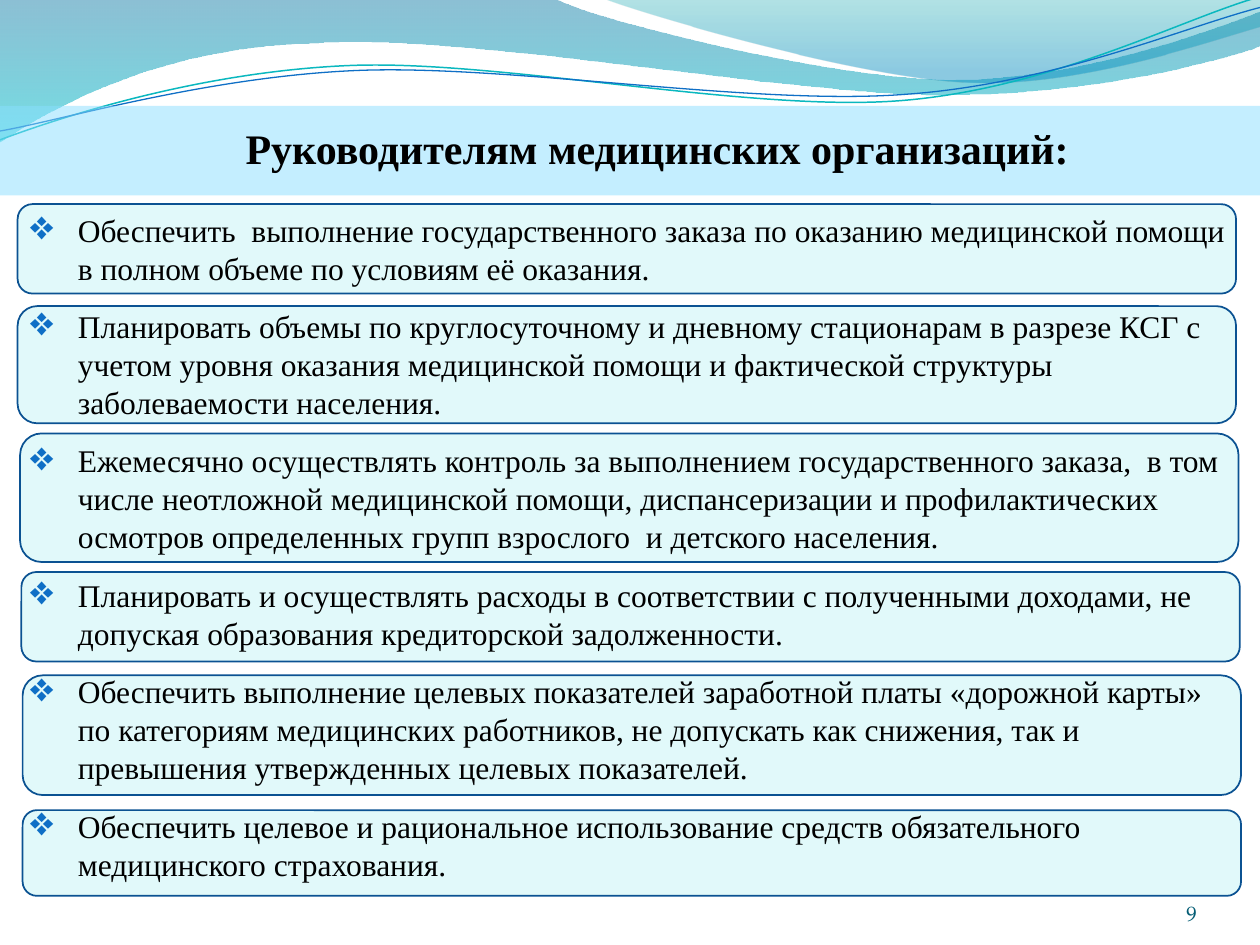
import math

import pptx
import pptx.dml.color
import pptx.enum.shapes
import pptx.enum.text
import pptx.oxml
import pptx.oxml.ns
import pptx.util

RGBColor = pptx.dml.color.RGBColor
Shapes = pptx.enum.shapes.MSO_SHAPE
Align = pptx.enum.text.PP_ALIGN
Anchor = pptx.enum.text.MSO_ANCHOR
AutoSize = pptx.enum.text.MSO_AUTO_SIZE

BLACK = RGBColor(0x00, 0x00, 0x00)
CARD = RGBColor(0x0B, 0xD0, 0xD9)
BORDER = RGBColor(0x0B, 0x52, 0x92)
BAND = RGBColor(0x8A, 0xDF, 0xFF)
BULLET = RGBColor(0x0F, 0x6F, 0xC6)
TEAL = RGBColor(0x0A, 0xB8, 0xBF)
NUMBER = RGBColor(0x04, 0x5D, 0x75)
DEEP_BLUE = RGBColor(0x00, 0x74, 0xA1)
CYAN = RGBColor(0x00, 0xC6, 0xCF)
SEA_GREEN = RGBColor(0x00, 0xA1, 0xA9)
SKY_BLUE = RGBColor(0x00, 0x8B, 0xBF)

SERIF = "Times New Roman"
PAGE_FONT = "TeX Gyre Pagella"
PX_PER_INCH = 100
CURVE_TILT = -2.7

CARD_WIDTH = 967
CARDS = [(14, 162, 71), (14, 243, 93), (16, 344, 102),
         (17, 454, 71), (18, 536, 95), (18, 643, 68)]
TASKS = [
    "Обеспечить  выполнение государственного заказа по оказанию медицинской помощи в полном объеме по условиям её оказания.",
    "Планировать объемы по круглосуточному и дневному стационарам в разрезе КСГ с учетом уровня оказания медицинской помощи и фактической структуры заболеваемости населения.",
    "Ежемесячно осуществлять контроль за выполнением государственного заказа,  в том числе неотложной медицинской помощи, диспансеризации и профилактических осмотров определенных групп взрослого  и детского населения.",
    "Планировать и осуществлять расходы в соответствии с полученными доходами, не допуская образования кредиторской задолженности.",
    "Обеспечить выполнение целевых показателей заработной платы «дорожной карты» по категориям медицинских работников, не допускать как снижения, так и превышения утвержденных целевых показателей.",
    "Обеспечить целевое и рациональное использование средств обязательного медицинского страхования.",
]

WIDE_WAVE = [(0, 0), (440, -1), (476, 17, 664, 63, 758, 63),
             (853, 63, 958, 26, 1000, 9), (1001, 36),
             (983, 44, 870, 76, 746, 75), (622, 75, 382, 28, 257, 34),
             (129, 36, 46, 83, -1, 113), (0, 0)]
RIGHT_WAVE = [(479, -1), (509, 11, 682, 62, 769, 65),
              (856, 69, 961, 32, 1000, 21), (1000, 0), (479, -1)]
TEAL_CURVE = [(0, 111), (48, 93, 158, 57, 277, 52),
              (395, 47, 593, 89, 713, 80), (833, 71, 938, 15, 998, -2)]
BLUE_CURVE = [(0, 104), (47, 96, 164, 61, 283, 56),
              (403, 51, 597, 84, 717, 75), (836, 67, 941, 21, 1000, 6)]


def px(length):
    """Convert px to EMU."""
    return round(length * pptx.util.Inches(1) / PX_PER_INCH)


def element(name, content="", **attributes):
    """Build a DrawingML element."""
    values = "".join(f' {key}="{value}"' for key, value in attributes.items())
    namespace = pptx.oxml.ns.nsdecls("a")
    return pptx.oxml.parse_xml(f"<a:{name} {namespace}{values}>{content}</a:{name}>")


def turn(path, center, degrees):
    """Turn every point of a path around a center."""
    cosine, sine = math.cos(math.radians(degrees)), math.sin(math.radians(degrees))
    turned = []
    for step in path:
        values = []
        for x, y in zip(step[::2], step[1::2]):
            across, down = x - center[0], y - center[1]
            values += [center[0] + across * cosine - down * sine,
                       center[1] + across * sine + down * cosine]
        turned.append(tuple(values))
    return turned


class SlideBuilder:
    """Hold the style and the current slide."""

    def __init__(self, slide, font):
        """Keep the slide and its main font."""
        self.slide = slide
        self.font = font

    def outline(self, path, closed):
        """Add an outline of lines and cubic curves without a shadow."""
        points = [(px(x), px(y)) for step in path for x, y in zip(step[::2], step[1::2])]
        builder = self.slide.shapes.build_freeform(*points[0], scale=1.0)
        builder.add_line_segments(points[1:], close=closed)
        shape = builder.convert_to_shape()
        shape.shadow.inherit = False
        lines = iter(list(shape.element.iter(pptx.oxml.ns.qn("a:lnTo"))))
        for step in path[1:]:
            line = next(lines)
            if len(step) == 6:
                curve = element("cubicBezTo")
                line.addprevious(curve)
                for part in (line, next(lines), next(lines)):
                    curve.append(part[0])
                    part.getparent().remove(part)
        return shape

    def wave(self, path, stops):
        """Add a wave with a translucent vertical gradient."""
        shape = self.outline(path, True)
        shape.line.fill.background()
        shape.fill.background()
        content = "".join(
            f'<a:gs pos="{position * 1000}"><a:srgbClr val="{color}">'
            f'<a:alpha val="{opacity * 1000}"/></a:srgbClr></a:gs>'
            for position, color, opacity in stops)
        gradient = element("gradFill", f'<a:gsLst>{content}</a:gsLst><a:lin ang="5400000" scaled="0"/>')
        properties = shape.element.spPr
        properties.replace(properties.find(pptx.oxml.ns.qn("a:noFill")), gradient)

    def curve(self, path, center, color, weight):
        """Add an open curved line, tilted around its center."""
        shape = self.outline(turn(path, center, -CURVE_TILT), False)
        shape.rotation = CURVE_TILT
        shape.fill.background()
        shape.line.color.rgb = color
        shape.line.width = pptx.util.Pt(weight)

    def panel(self, kind, box, color, opacity, border=None):
        """Add a translucent panel."""
        shape = self.slide.shapes.add_shape(kind, *map(px, box))
        shape.shadow.inherit = False
        shape.fill.solid()
        shape.fill.fore_color.rgb = color
        fill = shape.element.spPr.find(pptx.oxml.ns.qn("a:solidFill"))
        fill[0].append(element("alpha", val=opacity * 1000))
        if border is None:
            shape.line.fill.background()
        else:
            shape.line.color.rgb = border
            shape.line.width = pptx.util.Pt(1)

    def frame(self, box, wrap=True, grow=True):
        """Add an empty text box and return its text frame."""
        text_frame = self.slide.shapes.add_textbox(*map(px, box)).text_frame
        text_frame.word_wrap = wrap
        text_frame.auto_size = AutoSize.SHAPE_TO_FIT_TEXT if grow else AutoSize.NONE
        return text_frame

    def run(self, paragraph, text, size, color=BLACK, bold=False, font=None):
        """Add a styled run."""
        run = paragraph.add_run()
        run.text = text
        run.font.name = font or self.font
        run.font.size = pptx.util.Pt(size)
        run.font.bold = bold
        run.font.color.rgb = color

    def title(self, box, text):
        """Add the bold heading."""
        self.run(self.frame(box, wrap=False).paragraphs[0], text, 24, bold=True)

    def bullets(self, box, texts):
        """Add the bulleted list."""
        text_frame = self.frame(box)
        for index, text in enumerate(texts):
            paragraph = text_frame.add_paragraph() if index else text_frame.paragraphs[0]
            paragraph.line_spacing = pptx.util.Pt(21.7)
            paragraph.space_after = pptx.util.Pt(11.7)
            properties = paragraph._p.get_or_add_pPr()
            properties.set("marL", str(px(38)))
            properties.set("indent", str(px(-38)))
            properties.append(element("buClr", f'<a:srgbClr val="{BULLET}"/>'))
            properties.append(element("buSzPct", val=130000))
            properties.append(element("buChar", char="❖"))
            self.run(paragraph, text, 18)

    def page_number(self, box, text):
        """Add the page number at the bottom right."""
        text_frame = self.frame(box, grow=False)
        text_frame.margin_left = text_frame.margin_right = 0
        text_frame.margin_top = text_frame.margin_bottom = 0
        text_frame.vertical_anchor = Anchor.BOTTOM
        text_frame.paragraphs[0].alignment = Align.RIGHT
        self.run(text_frame.paragraphs[0], text, 12, NUMBER, font=PAGE_FONT)


def main():
    """Build and save the slide."""
    presentation = pptx.Presentation()
    presentation.slide_width, presentation.slide_height = px(1000), px(750)
    builder = SlideBuilder(presentation.slides.add_slide(presentation.slide_layouts[6]), SERIF)
    builder.wave(WIDE_WAVE, [(0, DEEP_BLUE, 45), (100, CYAN, 55)])
    builder.wave(RIGHT_WAVE, [(0, SEA_GREEN, 30), (80, SKY_BLUE, 45)])
    builder.curve(TEAL_CURVE, (499, 58), TEAL, 0.85)
    builder.curve(BLUE_CURVE, (500, 59), BULLET, 0.75)
    for left, top, height in reversed(CARDS):
        builder.panel(Shapes.ROUNDED_RECTANGLE, (left, top, CARD_WIDTH, height), CARD, 12, BORDER)
    builder.panel(Shapes.RECTANGLE, (0, 84, 1000, 71), BAND, 50)
    builder.bullets((14, 162, 976, 549), TASKS)
    builder.title((185, 92, 681, 50), "Руководителям медицинских организаций:")
    builder.page_number((867, 695, 83, 40), "9")
    presentation.save("out.pptx")


if __name__ == "__main__":
    main()
